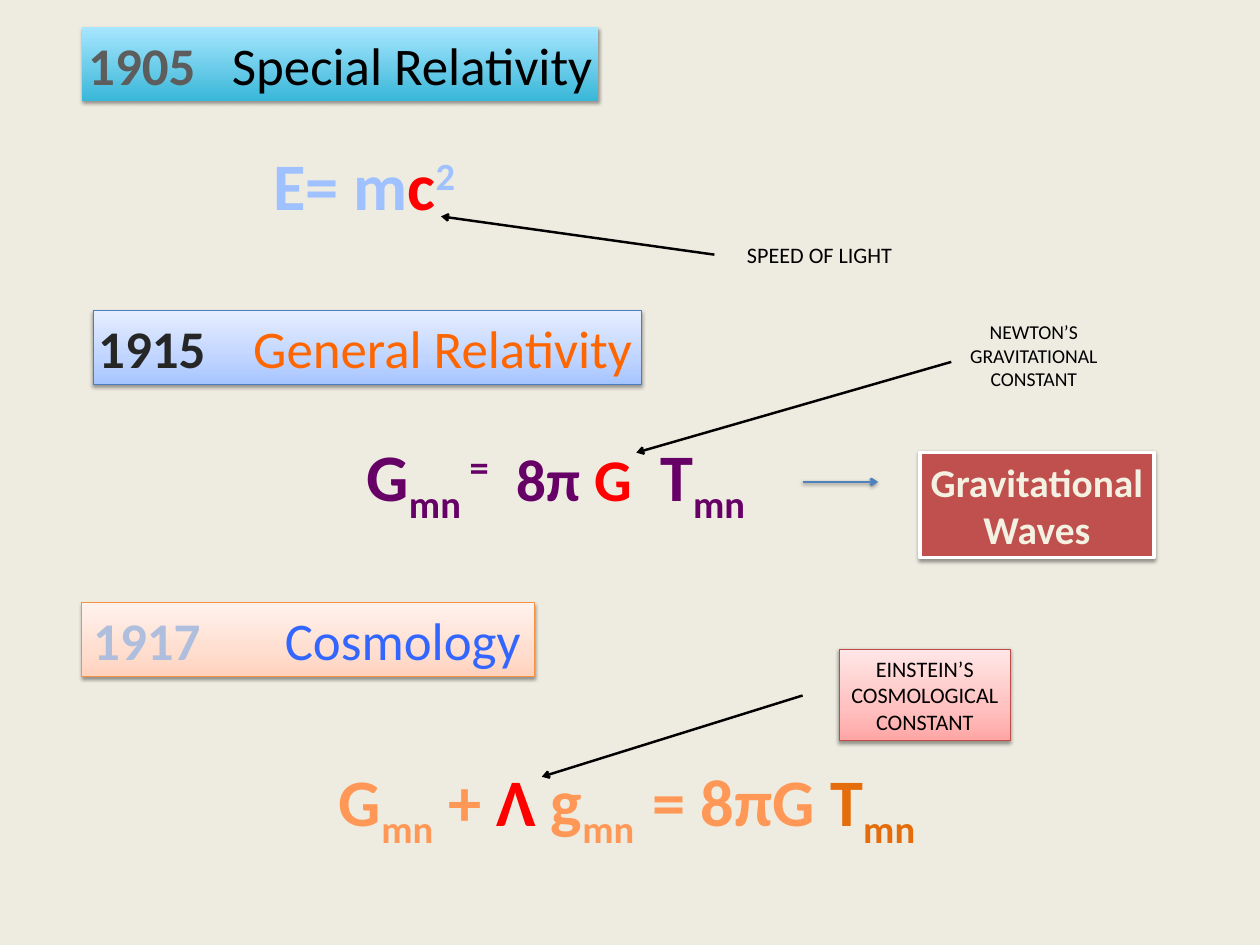
from dataclasses import dataclass
from typing import NamedTuple

from lxml import etree
from pptx import Presentation
from pptx import util as u
from pptx.dml.color import RGBColor
from pptx.enum import shapes, text
from pptx.oxml.ns import qn


@dataclass(frozen=True)
class Theme:
    font: str = "Calibri"
    background: str = "EEECE1"
    ink: str = "000000"
    highlight: str = "FF0000"
    energy: str = "A0C1FF"
    field: str = "660066"
    cosmos: str = "FF9856"
    matter: str = "E46C0A"
    waves: str = "C0504D"
    waves_text: str = "F4F1E3"
    white: str = "FFFFFF"
    link: str = "4F81BD"
    year_1905: str = "5D5D5D"
    year_1915: str = "262626"
    year_1917: str = "AEBEDC"
    general: str = "FF6600"
    cosmology: str = "3366FF"
    formula: float = 54
    factor: float = 48
    heading: float = 43
    callout: float = 32
    note: float = 18
    small_note: float = 16


T = Theme()
WIDTH, HEIGHT = 14.22, 10.67
INSET = 0.06
SUB, SUPER = -25, 30


class Run(NamedTuple):
    text: str
    color: str = T.ink
    size: float = T.formula
    bold: bool = True
    baseline: int = 0


class Stop(NamedTuple):
    position: int
    color: str


@dataclass(frozen=True)
class Box:
    """Place, start and tabs are percentages of the slide's size."""
    place: tuple[float, float, float, float]
    lines: list[list[Run]]
    fill: tuple[Stop, ...] = ()
    line: str = ""
    line_width: float = 0.75
    shadow: bool = False
    start: float | None = None
    tabs: tuple[float, ...] = ()
    top: bool = False


class Arrow(NamedTuple):
    start: tuple[float, float]
    end: tuple[float, float]
    color: str = T.ink
    shadow: bool = False


def x(share: float) -> u.Emu:
    return u.Inches(WIDTH * share / 100)


def y(share: float) -> u.Emu:
    return u.Inches(HEIGHT * share / 100)


def rgb(color: str) -> RGBColor:
    return RGBColor.from_string(color)


def add_node(parent, tag: str, **attributes):
    values = {name: str(value) for name, value in attributes.items()}
    return etree.SubElement(parent, qn(tag), values)


def set_effects(sp, shadow: bool) -> None:
    """Give a shape a soft shadow below it, or none."""
    effects = add_node(sp._element.spPr, "a:effectLst")
    if shadow:
        outer = add_node(effects, "a:outerShdw", blurRad=u.Pt(3.1), dist=u.Pt(1.6),
                         dir=5400000, rotWithShape=0)
        color = add_node(outer, "a:srgbClr", val=T.ink)
        add_node(color, "a:alpha", val=38000)


def paint(sp, stops: tuple[Stop, ...]) -> None:
    if len(stops) == 1:
        sp.fill.solid()
        sp.fill.fore_color.rgb = rgb(stops[0].color)
        return
    sp.fill.gradient()
    sp.fill.gradient_angle = 90
    stop_list = sp._element.spPr.find(".//" + qn("a:gsLst"))
    for old in list(stop_list):
        stop_list.remove(old)
    for stop in stops:
        node = add_node(stop_list, "a:gs", pos=stop.position * 1000)
        add_node(node, "a:srgbClr", val=stop.color)


def write(sp, box: Box) -> None:
    tf = sp.text_frame
    tf.word_wrap = True
    tf.vertical_anchor = text.MSO_ANCHOR.TOP if box.top else text.MSO_ANCHOR.MIDDLE
    tf.margin_left = tf.margin_right = tf.margin_top = tf.margin_bottom = u.Inches(INSET)
    if box.start is not None:
        tf.margin_left = x(box.start - box.place[0])
        tf.margin_right = 0
    for i, line in enumerate(box.lines):
        p = tf.add_paragraph() if i else tf.paragraphs[0]
        p.alignment = text.PP_ALIGN.CENTER if box.start is None else text.PP_ALIGN.LEFT
        if box.tabs:
            tab_list = add_node(p._p.get_or_add_pPr(), "a:tabLst")
            for tab in box.tabs:
                add_node(tab_list, "a:tab", pos=int(x(tab - box.start)), algn="l")
        for run in line:
            r = p.add_run()
            r.text = run.text
            r.font.name, r.font.size, r.font.bold = T.font, u.Pt(run.size), run.bold
            r.font.color.rgb = rgb(run.color)
            if run.baseline:
                r.font._element.set("baseline", str(run.baseline * 1000))


def draw_box(s, box: Box):
    left, top, width, height = box.place
    frame = x(left), y(top), x(width), y(height)
    if box.fill:
        sp = s.shapes.add_shape(shapes.MSO_SHAPE.RECTANGLE, *frame)
        paint(sp, box.fill)
        if box.line:
            sp.line.color.rgb = rgb(box.line)
            sp.line.width = u.Pt(box.line_width)
        else:
            sp.line.fill.background()
        sp.shadow.inherit = not box.shadow
        for old in sp._element.spPr.findall(qn("a:effectLst")):
            sp._element.spPr.remove(old)
        set_effects(sp, box.shadow)
    else:
        sp = s.shapes.add_textbox(*frame)
    write(sp, box)
    return sp


def draw_arrow(s, arrow: Arrow):
    (x1, y1), (x2, y2) = arrow.start, arrow.end
    c = s.shapes.add_connector(shapes.MSO_CONNECTOR.STRAIGHT, x(x1), y(y1), x(x2), y(y2))
    c.line.color.rgb = rgb(arrow.color)
    c.line.width = u.Pt(2)
    add_node(c.line._get_or_add_ln(), "a:tailEnd", type="arrow")
    set_effects(c, arrow.shadow)
    return c


def heading(place: tuple[float, float, float, float], year: Run, title: Run,
            colors: tuple[str, ...], line: str, start: float, tab: float) -> Box:
    positions = (0, 35, 100) if len(colors) == 3 else (0, 100)
    return Box(place, [[year, title]], tuple(map(Stop, positions, colors)), line,
               shadow=True, start=start, tabs=(tab,))


def year(label: str, color: str) -> Run:
    return Run(label + "\t", color, T.heading)


def title(label: str, color: str = T.ink) -> Run:
    return Run(label, color, T.heading, False)


def stacked(words: str, size: float, color: str = T.ink, bold: bool = False) -> list[list[Run]]:
    """One centred line for each word."""
    return [[Run(word, color, size, bold)] for word in words.split()]


HEADINGS = [
    heading((6.5, 2.9, 41, 7.8), year("1905", T.year_1905), title("Special Relativity"),
            ("39B7D8", "A7E6FF"), "", 7, 18.4),
    heading((7.4, 32.9, 43.5, 7.8), year("1915", T.year_1915),
            title("General Relativity", T.general),
            ("A4C4FF", "BFD4FF", "E6EEFF"), "4B7EBC", 7.8, 20.1),
    heading((6.5, 63.8, 35.9, 7.8), year("1917", T.year_1917), title("Cosmology", T.cosmology),
            ("FFD2BD", "FFDED0", "FFF2ED"), "F69240", 7.4, 22.6),
]
FORMULAS = [
    Box((14.8, 14.7, 28.2, 9.5), [[Run("E= m", T.energy), Run("c", T.highlight),
                                  Run("2", T.energy, baseline=SUPER)]], top=True),
    Box((18.8, 45.5, 50.8, 9.5), [[
        Run("G", T.field), Run("mn ", T.field, baseline=SUB),
        Run("=\t", T.field, baseline=SUPER), Run("8π ", T.field, T.factor),
        Run("G\t", T.highlight, T.factor), Run("T", T.field),
        Run("mn", T.field, baseline=SUB)]], start=29.1, tabs=(41, 52.4), top=True),
    Box((20, 79.9, 60.2, 9.5), [[
        Run("G", T.cosmos), Run("mn", T.cosmos, baseline=SUB), Run(" + ", T.cosmos),
        Run("Λ ", T.highlight), Run("g", T.cosmos), Run("mn\t", T.cosmos, baseline=SUB),
        Run("= 8πG ", T.cosmos), Run("T", T.matter), Run("mn", T.matter, baseline=SUB)]],
        start=26.9, tabs=(51.8,), top=True),
]
SPEED_OF_LIGHT = Box((56.7, 25, 16.7, 3.9), [[Run("SPEED OF LIGHT", size=T.note, bold=False)]])
NOTES = [
    Box((76.4, 33.3, 11.3, 8.6), stacked("NEWTON’S GRAVITATIONAL CONSTANT", T.small_note)),
    Box((66.6, 68.7, 13.6, 9.7), stacked("EINSTEIN’S COSMOLOGICAL CONSTANT", T.note),
        (Stop(0, "FFA6A5"), Stop(35, "FFC0BF"), Stop(100, "FFE7E7")), "BF4C48", shadow=True),
    Box((73, 47.9, 18.6, 11.1), stacked("Gravitational Waves", T.callout, T.waves_text, True),
        (Stop(0, T.waves),), T.white, 3, True),
]
LIGHT_ARROW = Arrow((56.7, 27), (35, 22.9))
ARROWS = [
    Arrow((75.5, 38.3), (50.5, 47.9)),
    Arrow((63.7, 73.6), (43, 82.2)),
    Arrow((63.7, 51), (69.7, 51), T.link, True),
]


def main() -> None:
    prs = Presentation()
    prs.slide_width, prs.slide_height = u.Inches(WIDTH), u.Inches(HEIGHT)
    s = prs.slides.add_slide(prs.slide_layouts[6])
    s.background.fill.solid()
    s.background.fill.fore_color.rgb = rgb(T.background)
    for box in HEADINGS + FORMULAS + NOTES:
        draw_box(s, box)
    for arrow in ARROWS:
        draw_arrow(s, arrow)
    light = draw_box(s, SPEED_OF_LIGHT)
    draw_arrow(s, LIGHT_ARROW).begin_connect(light, 1)
    prs.save("out.pptx")


if __name__ == "__main__":
    main()
